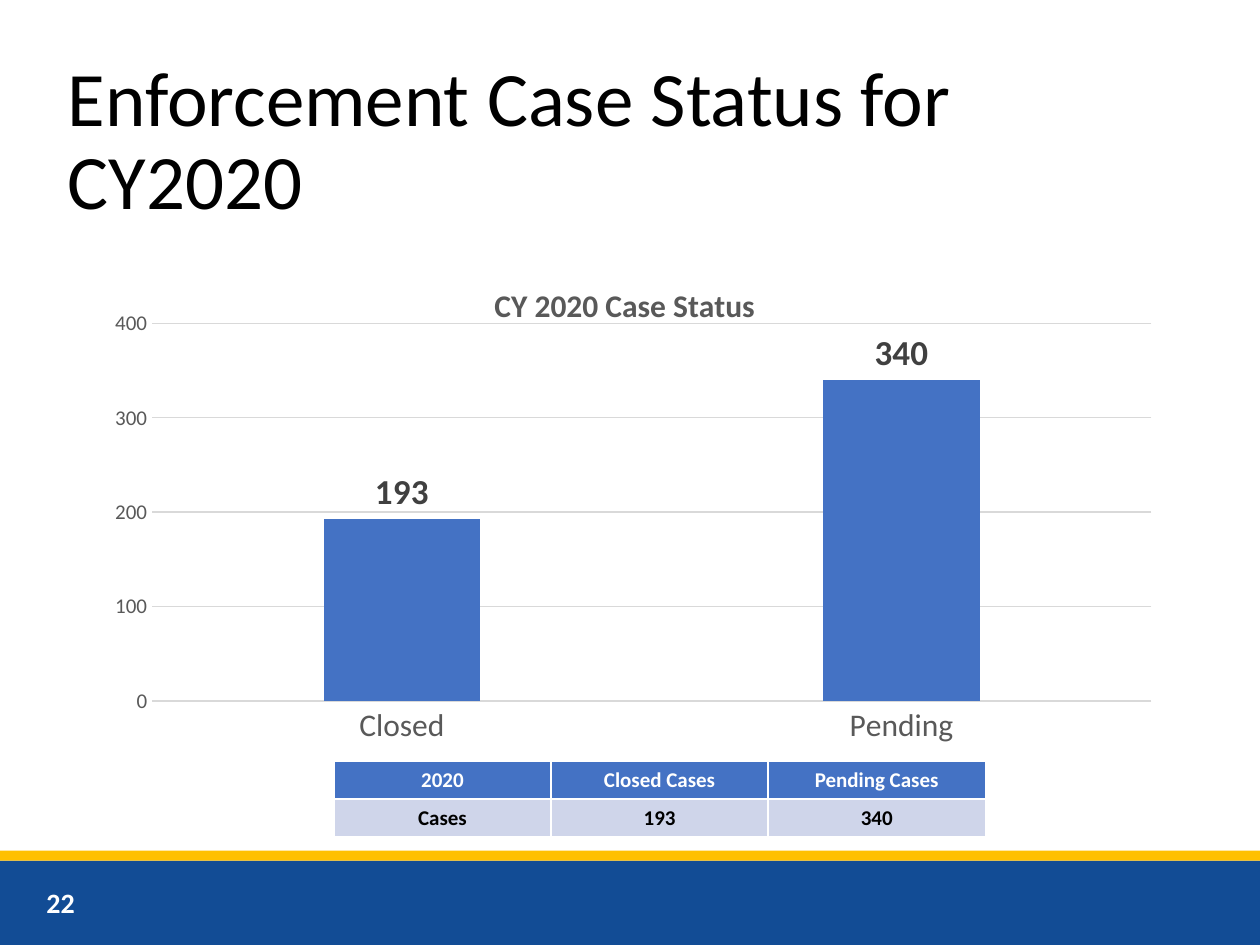
from dataclasses import dataclass

from lxml import etree
from pptx import Presentation
from pptx.chart.data import CategoryChartData
from pptx.dml.color import RGBColor
from pptx.enum.chart import XL_CHART_TYPE, XL_LABEL_POSITION, XL_TICK_MARK
from pptx.enum.shapes import MSO_SHAPE
from pptx.enum.text import MSO_ANCHOR, PP_ALIGN
from pptx.oxml import parse_xml
from pptx.oxml.ns import nsdecls, qn
from pptx.util import Inches, Pt

COLUMN = XL_CHART_TYPE.COLUMN_CLUSTERED
OUTSIDE_END = XL_LABEL_POSITION.OUTSIDE_END
NO_TICK = XL_TICK_MARK.NONE
RECTANGLE = MSO_SHAPE.RECTANGLE
MIDDLE = MSO_ANCHOR.MIDDLE
CENTER, LEFT = PP_ALIGN.CENTER, PP_ALIGN.LEFT
GRID_COLUMNS, GRID_ROWS = 100, 75


@dataclass(frozen=True)
class Theme:
    font: str = "Calibri"
    navy: str = "124C95"
    gold: str = "FFC000"
    blue: str = "4472C4"
    pale: str = "CFD5EA"
    rule: str = "D9D9D9"
    gray: str = "595959"
    dark: str = "404040"
    black: str = "000000"
    white: str = "FFFFFF"
    title: int = 44
    label: int = 20
    heading: int = 18
    number: int = 16
    small: int = 12


class SlideBuilder:
    """Draws on one page; places are (left, top, width, height) in grid units."""

    def __init__(self, deck, theme):
        self.theme = theme
        self.unit_x = deck.slide_width / GRID_COLUMNS
        self.unit_y = deck.slide_height / GRID_ROWS
        self.page = deck.slides.add_slide(deck.slide_layouts[6])

    def place(self, left, top, width, height):
        return (round(left * self.unit_x), round(top * self.unit_y),
                round(width * self.unit_x), round(height * self.unit_y))

    def style(self, font, size, color, bold=False):
        font.name = self.theme.font
        font.size = Pt(size)
        font.bold = bold
        font.color.rgb = RGBColor.from_string(color)

    def paint(self, fill, color):
        fill.solid()
        fill.fore_color.rgb = RGBColor.from_string(color)

    def band(self, area, color):
        band = self.page.shapes.add_shape(RECTANGLE, *self.place(*area))
        band.shadow.inherit = False
        self.paint(band.fill, color)
        band.line.fill.background()

    def text(self, area, words, size, color, bold=False, spacing=1.0):
        box = self.page.shapes.add_textbox(*self.place(*area))
        frame = box.text_frame
        frame.word_wrap = True
        frame.vertical_anchor = MIDDLE
        para = frame.paragraphs[0]
        para.text = words
        para.alignment = LEFT
        para.line_spacing = spacing
        self.style(para.font, size, color, bold)

    def border(self, cell, color):
        properties = cell._tc.get_or_add_tcPr()
        for index, side in enumerate("LRTB"):
            properties.insert(index, parse_xml(
                f'<a:ln{side} {nsdecls("a")} w="{Pt(1)}"><a:solidFill>'
                f'<a:srgbClr val="{color}"/></a:solidFill></a:ln{side}>'))

    def table(self, area, rows):
        theme = self.theme
        table = self.page.shapes.add_table(
            len(rows), len(rows[0]), *self.place(*area)).table
        looks = [(theme.blue, theme.white)] + [(theme.pale, theme.black)] * (len(rows) - 1)
        for r, (row, (fill, color)) in enumerate(zip(rows, looks)):
            for c, words in enumerate(row):
                cell = table.cell(r, c)
                cell.vertical_anchor = MIDDLE
                cell.margin_left = cell.margin_right = Inches(0.05)
                cell.margin_top = cell.margin_bottom = Inches(0.05)
                self.paint(cell.fill, fill)
                self.border(cell, theme.white)
                para = cell.text_frame.paragraphs[0]
                para.text = words
                para.alignment = CENTER
                self.style(para.font, theme.small, color, bold=True)

    def chart_layout(self, parent, target=None, **shares):
        """Fix the place of a chart part as shares of the chart's size."""
        for old in parent.findall(qn("c:layout")):
            parent.remove(old)
        layout = etree.Element(qn("c:layout"))
        manual = etree.SubElement(layout, qn("c:manualLayout"))
        values = {"layoutTarget": target} if target else {}
        values.update(xMode="edge", yMode="edge", **shares)
        for name, value in values.items():
            etree.SubElement(manual, qn(f"c:{name}")).set("val", str(value))
        text = parent.find(qn("c:tx"))
        parent.insert(0 if text is None else parent.index(text) + 1, layout)

    def rule(self, line):
        line.width = Pt(0.75)
        line.color.rgb = RGBColor.from_string(self.theme.rule)

    def column_chart(self, area, title, categories, values, top, step):
        theme = self.theme
        data = CategoryChartData()
        data.categories = categories
        data.add_series("Series 1", values)
        chart = self.page.shapes.add_chart(COLUMN, *self.place(*area), data).chart
        self.style(chart.font, theme.small, theme.gray)
        chart.has_legend = False

        chart.has_title = True
        para = chart.chart_title.text_frame.paragraphs[0]
        para.text = title
        self.style(para.font, theme.heading, theme.gray, bold=True)
        chart.chart_title.include_in_layout = False
        self.chart_layout(chart.chart_title._element, x=0.37, y=0.05)
        self.chart_layout(chart._chartSpace.chart.plotArea, "inner",
                          x=0.06, y=0.14, w=0.92, h=0.74)

        for axis, size in ((chart.category_axis, theme.heading),
                           (chart.value_axis, theme.small)):
            axis.major_tick_mark = axis.minor_tick_mark = NO_TICK
            self.style(axis.tick_labels.font, size, theme.gray)
        self.rule(chart.category_axis.format.line)
        scale = chart.value_axis
        scale.minimum_scale, scale.maximum_scale, scale.major_unit = 0, top, step
        scale.format.line.fill.background()
        self.rule(scale.major_gridlines.format.line)

        plot = chart.plots[0]
        plot.vary_by_categories = False
        plot.gap_width, plot.overlap = 219, -27
        self.paint(plot.series[0].format.fill, theme.blue)
        plot.has_data_labels = True
        labels = plot.data_labels
        labels.show_value = True
        labels.position = OUTSIDE_END
        self.style(labels.font, theme.label, theme.dark, bold=True)


def main():
    deck = Presentation()
    deck.slide_width, deck.slide_height = Inches(10), Inches(7.5)
    theme = Theme()
    slide = SlideBuilder(deck, theme)

    slide.band((0, 68.3, GRID_COLUMNS, 6.7), theme.navy)
    slide.band((0, 67.5, GRID_COLUMNS, 0.8), theme.gold)
    slide.text((2.7, 69.6, 22.5, 4), "22", theme.number, theme.white, bold=True)
    slide.table((26.5, 60.4, 51.7, 6), [("2020", "Closed Cases", "Pending Cases"),
                                        ("Cases", "193", "340")])
    slide.column_chart((6.9, 20, 86.2, 40.5), "CY 2020 Case Status",
                       ("Closed", "Pending"), (193, 340), top=400, step=100)
    slide.text((4.4, 4.1, 91.2, 14.5), "Enforcement Case Status for CY2020",
               theme.title, theme.black, spacing=0.9)
    deck.save("out.pptx")


if __name__ == "__main__":
    main()
